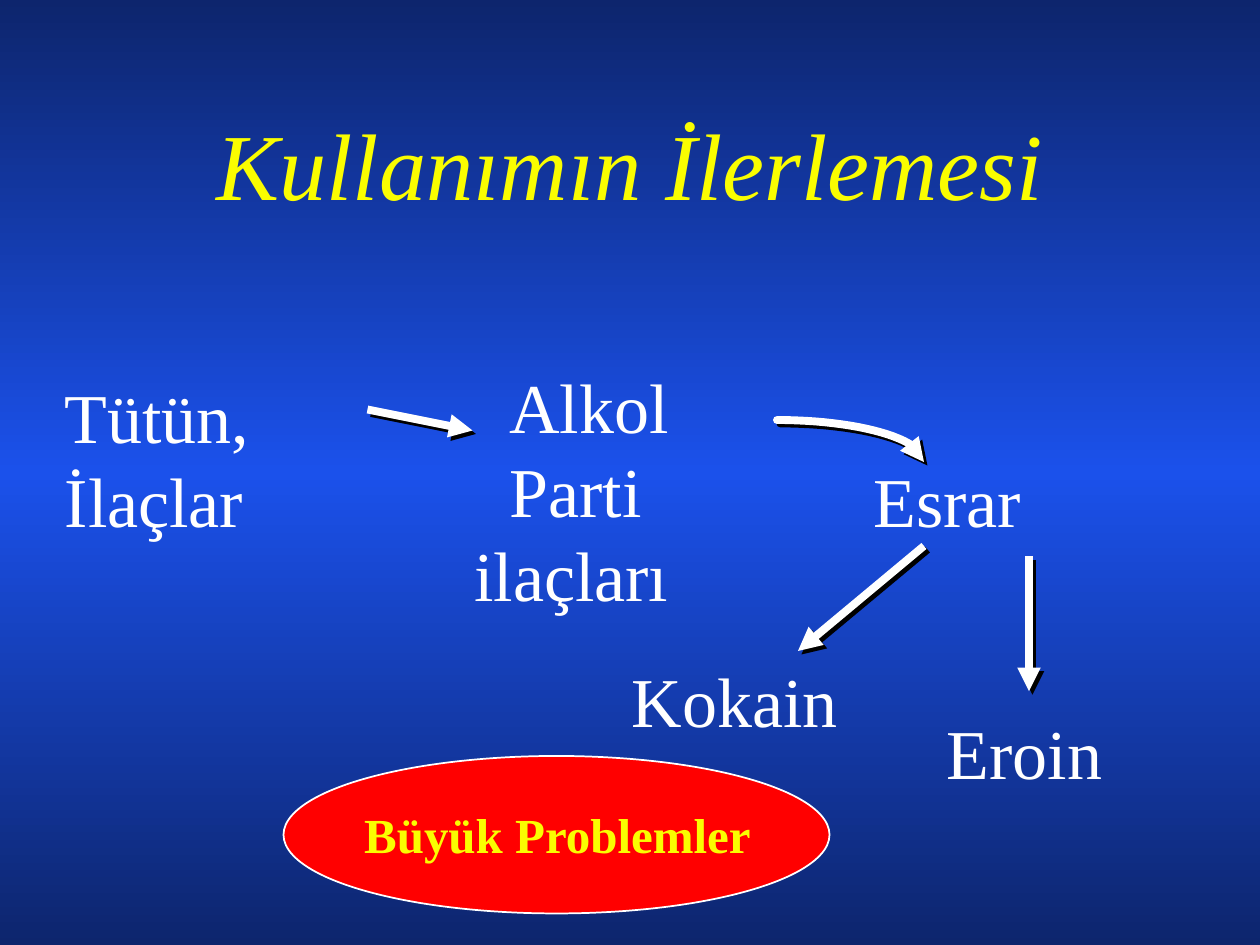
from copy import deepcopy
from dataclasses import dataclass
from math import cos, pi, sin

from lxml.etree import SubElement
from pptx import Presentation
from pptx.dml.color import RGBColor
from pptx.enum.shapes import MSO_CONNECTOR, MSO_SHAPE
from pptx.enum.text import MSO_ANCHOR, MSO_AUTO_SIZE, PP_ALIGN
from pptx.oxml.ns import qn
from pptx.util import Pt


@dataclass(frozen=True)
class Theme:
    font: str = "Times New Roman"
    edge: str = "0D256D"
    glow: str = "1B51EB"
    accent: str = "FAFD00"
    light: str = "FFFFFF"
    alert: str = "FF0000"
    shadow: str = "000000"
    title_size: float = 54
    label_size: float = 40
    problem_size: float = 28
    line_pitch: float = 1.2
    arrow_width: float = 4.5


def rgb(code):
    return RGBColor.from_string(code)


class ProgressionSlide:
    def __init__(self, deck, theme):
        self.theme = theme
        self.slide = deck.slides.add_slide(deck.slide_layouts[5])

    def background(self):
        fill = self.slide.background.fill
        fill.gradient()
        fill.gradient_angle = 90
        stop_list = self.slide.element.find(".//" + qn("a:gsLst"))
        stop_list.append(deepcopy(stop_list[0]))
        colors = (self.theme.edge, self.theme.glow, self.theme.edge)
        for stop, position, color in zip(fill.gradient_stops, (0, 0.5, 1), colors):
            stop.position = position
            stop.color.rgb = rgb(color)

    def shadow(self, parent):
        effects = SubElement(parent, qn("a:effectLst"))
        outer = SubElement(effects, qn("a:outerShdw"), blurRad="0",
                           dist=str(Pt(2.8)), dir="2700000", algn="ctr", rotWithShape="0")
        SubElement(outer, qn("a:srgbClr"), val=self.theme.shadow)

    def add_run(self, paragraph, text, size, color, bold=False, italic=False, indent=0):
        paragraph.line_spacing = Pt(size * self.theme.line_pitch)
        paragraph.space_before = Pt(0)
        if indent:
            paragraph._p.get_or_add_pPr().set("indent", str(Pt(indent)))
        run = paragraph.add_run()
        run.text = text
        font = run.font
        font.size, font.bold, font.italic = Pt(size), bold, italic
        font.color.rgb = rgb(color)
        self.shadow(run._r.get_or_add_rPr())
        font.name = self.theme.font

    def title(self, text, left, top, width, height):
        heading = self.slide.shapes.title
        heading.left, heading.top = Pt(left), Pt(top)
        heading.width, heading.height = Pt(width), Pt(height)
        frame = heading.text_frame
        frame.auto_size = MSO_AUTO_SIZE.NONE
        frame.vertical_anchor = MSO_ANCHOR.MIDDLE
        paragraph = frame.paragraphs[0]
        paragraph.alignment = PP_ALIGN.CENTER
        self.add_run(paragraph, text, self.theme.title_size, self.theme.accent, italic=True)

    def label(self, lines, left, top, width, height, size=None, color=None,
              bold=False, indent=0, margin_top=3.6):
        box = self.slide.shapes.add_textbox(Pt(left), Pt(top), Pt(width), Pt(height))
        frame = box.text_frame
        frame.word_wrap = True
        frame.margin_top = Pt(margin_top)
        for index, line in enumerate(lines):
            paragraph = frame.add_paragraph() if index else frame.paragraphs[0]
            self.add_run(paragraph, line, size or self.theme.label_size,
                         color or self.theme.light, bold, indent=indent)

    def ellipse(self, left, top, width, height):
        oval = self.slide.shapes.add_shape(
            MSO_SHAPE.OVAL, Pt(left), Pt(top), Pt(width), Pt(height))
        oval.shadow.inherit = False
        oval.fill.solid()
        oval.fill.fore_color.rgb = rgb(self.theme.alert)
        oval.line.color.rgb = rgb(self.theme.light)
        oval.line.width = Pt(1)

    def style_arrow(self, arrow):
        arrow.line.color.rgb = rgb(self.theme.light)
        arrow.line.width = Pt(self.theme.arrow_width)
        properties = arrow._element.spPr
        SubElement(properties.find(qn("a:ln")), qn("a:tailEnd"), type="triangle")
        self.shadow(properties)

    def arrow(self, start, end):
        self.style_arrow(self.slide.shapes.add_connector(
            MSO_CONNECTOR.STRAIGHT, *map(Pt, start + end)))

    def curved_arrow(self, start, end, steps=24):
        (x, y), (end_x, end_y) = start, end
        angles = [pi / 2 * step / steps for step in range(1, steps + 1)]
        points = [(Pt(x + (end_x - x) * sin(angle)),
                   Pt(end_y - (end_y - y) * cos(angle))) for angle in angles]
        builder = self.slide.shapes.build_freeform(Pt(x), Pt(y))
        builder.add_line_segments(points, close=False)
        curve = builder.convert_to_shape()
        curve.fill.background()
        self.style_arrow(curve)
        curve._element.spPr.find(qn("a:ln")).set("cap", "rnd")


def main():
    theme = Theme()
    deck = Presentation()
    deck.slide_width, deck.slide_height = Pt(720), Pt(540)
    page = ProgressionSlide(deck, theme)
    page.background()
    page.title("Kullanımın İlerlemesi", 54, 48, 612, 90)
    page.label(["Alkol", "Parti ilaçları"], 264, 204, 204, 152.4, indent=20)
    page.label(["Esrar"], 492, 258, 202, 55.2)
    page.label(["Eroin"], 534, 402, 132, 55.2)
    page.ellipse(162, 432, 312, 90)
    page.label(["Büyük Problemler"], 180, 456, 286, 40.8,
               theme.problem_size, theme.accent, bold=True, indent=21)
    page.label(["Kokain"], 354, 372, 154, 55.2)
    page.arrow((528, 312), (456, 372))
    page.arrow((588, 318), (588, 395))
    page.curved_arrow((444, 240), (528, 264))
    page.label(["Tütün, İlaçlar"], 30, 162, 228, 259, margin_top=51.6)
    page.arrow((210, 234), (270, 246))
    deck.save("out.pptx")


if __name__ == "__main__":
    main()
